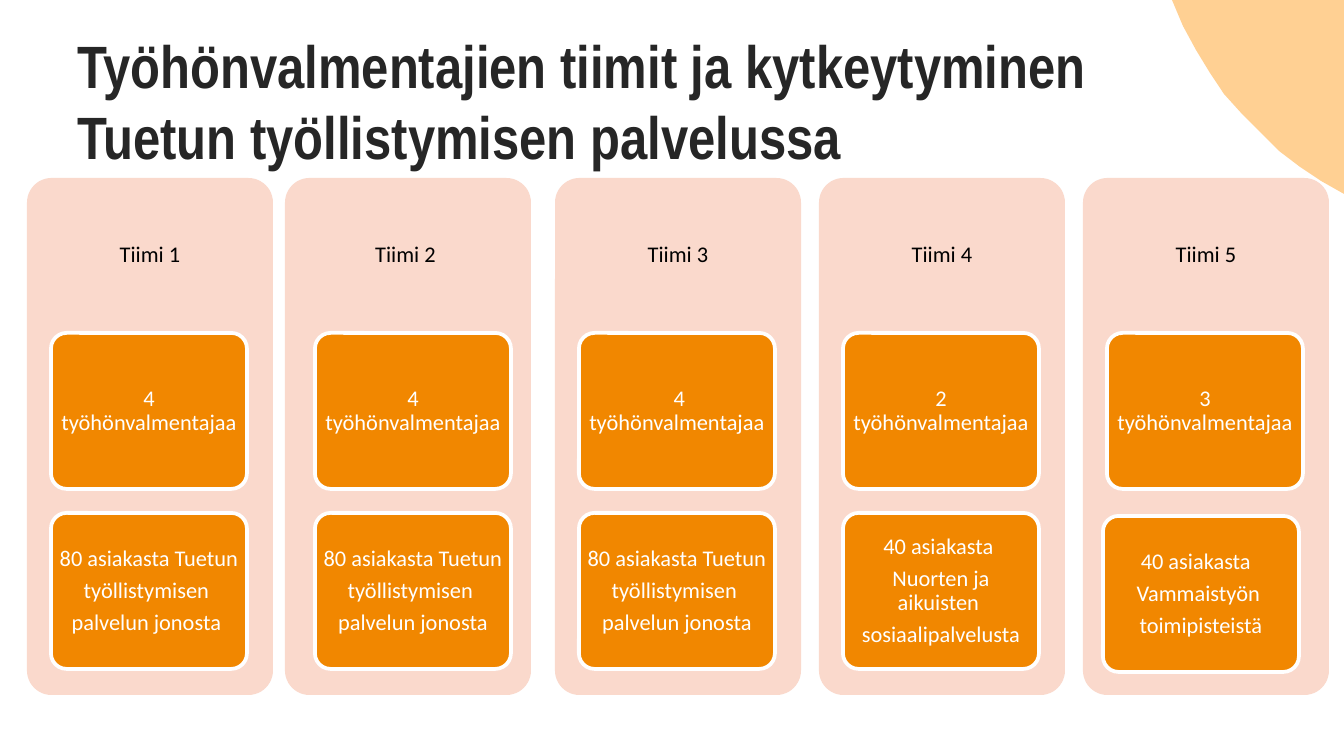
"""Build a slide of five job coach teams and the clients each one serves."""
from pptx import Presentation
from pptx.dml.color import RGBColor
from pptx.enum.shapes import MSO_SHAPE
from pptx.enum.text import MSO_ANCHOR, MSO_AUTO_SIZE, PP_ALIGN
from pptx.util import Pt

ROUND = MSO_SHAPE.ROUNDED_RECTANGLE
LEFT, CENTER = PP_ALIGN.LEFT, PP_ALIGN.CENTER
MIDDLE, BOTTOM = MSO_ANCHOR.MIDDLE, MSO_ANCHOR.BOTTOM
FIXED = MSO_AUTO_SIZE.NONE

PEACH = RGBColor(0xFF, 0xD0, 0x93)
PINK = RGBColor(0xFA, 0xD9, 0xCC)
ORANGE = RGBColor(0xF1, 0x87, 0x00)
WHITE = RGBColor(0xFF, 0xFF, 0xFF)
BLACK = RGBColor(0x00, 0x00, 0x00)
DARK = RGBColor(0x26, 0x26, 0x26)

PX = 914400 / 134.4
WIDTH, HEIGHT = 1344, 756

TITLE = "Työhönvalmentajien tiimit ja kytkeytyminen Tuetun työllistymisen palvelussa"
QUEUE = ["80 asiakasta Tuetun ", "työllistymisen ", "palvelun jonosta"]
SOCIAL = ["40 asiakasta ", "Nuorten ja aikuisten ", "sosiaalipalvelusta"]
SITES = ["40 asiakasta  ", "Vammaistyön ", "toimipisteistä"]
TEAMS = [
    {"name": "Tiimi 1", "staff": "4 työhönvalmentajaa",
     "clients": QUEUE[:2] + ["palvelun jonosta "]},
    {"name": "Tiimi 2 ", "staff": "4 työhönvalmentajaa", "clients": QUEUE, "shift": -6},
    {"name": "Tiimi 3", "staff": " 4 työhönvalmentajaa", "clients": QUEUE},
    {"name": "Tiimi 4", "staff": "2 työhönvalmentajaa", "clients": SOCIAL},
    {"name": "Tiimi 5", "staff": "3 työhönvalmentajaa", "clients": SITES, "nudge": (-4, 3)},
]
CURVE = [(1172, 0), (1183, 26), (1196, 50), (1210, 73), (1224, 94), (1242, 114),
         (1261, 133), (1279, 151), (1300, 167), (1321, 181), (1344, 194), (1344, 0)]

EDGE, TOP, PITCH = 27, 178, 264
PANEL_W, PANEL_H = 246, 517
CARD_W, CARD_H = 196, 156
INDENT, STAFF_Y, CLIENT_Y = 24, 333, 513


def px(*nums):
    return [round(n * PX) for n in nums]


def write(shape, lines, size=12, font="Calibri", color=WHITE, bold=False,
          align=CENTER, anchor=MIDDLE, inset=(4, 4), leading=0.9, after=4.2):
    frame = shape.text_frame
    frame.word_wrap = True
    frame.auto_size = FIXED
    frame.vertical_anchor = anchor
    side, cap = px(*inset)
    frame.margin_left = frame.margin_right = side
    frame.margin_top = frame.margin_bottom = cap
    for i, line in enumerate(lines):
        para = frame.paragraphs[0] if i == 0 else frame.add_paragraph()
        para.alignment = align
        para.line_spacing = leading
        para.space_before = Pt(0)
        para.space_after = Pt(after)
        run = para.add_run()
        run.text = line
        run.font.size = Pt(size)
        run.font.name = font
        run.font.bold = bold
        run.font.color.rgb = color


def paint(shape, fill, line=None):
    shape.shadow.inherit = False
    shape.fill.solid()
    shape.fill.fore_color.rgb = fill
    if line is None:
        shape.line.fill.background()
    else:
        shape.line.color.rgb = line
        shape.line.width = Pt(2)


def block(shapes, x, y, w, h, fill, line=None):
    shape = shapes.add_shape(ROUND, *px(x, y, w, h))
    shape.adjustments[0] = 0.1
    paint(shape, fill, line)
    return shape


def draw_team(shapes, index, team):
    x = EDGE + index * PITCH
    left = x + team.get("shift", 0)
    block(shapes, left, TOP, PANEL_W, PANEL_H, PINK)
    label = shapes.add_textbox(*px(left, TOP, PANEL_W, STAFF_Y - TOP))
    write(label, [team["name"]], color=BLACK, inset=(7, 7))
    dx, dy = team.get("nudge", (0, 0))
    cards = [(0, STAFF_Y, [team["staff"]]), (dx, CLIENT_Y + dy, team["clients"])]
    for move, y, lines in cards:
        card = block(shapes, x + INDENT + move, y, CARD_W, CARD_H, ORANGE, WHITE)
        write(card, lines)


def main():
    deck = Presentation()
    deck.slide_width, deck.slide_height = px(WIDTH, HEIGHT)
    slide = deck.slides.add_slide(deck.slide_layouts[5])
    shapes = slide.shapes

    pen = shapes.build_freeform(*CURVE[0], scale=PX)
    pen.add_line_segments(CURVE[1:], close=True)
    paint(pen.convert_to_shape(), PEACH)

    for index, team in enumerate(TEAMS):
        draw_team(shapes, index, team)

    title = shapes.title
    title.left, title.top, title.width, title.height = px(64, 35, 1137, 144)
    write(title, [TITLE], size=32, font="Arial Narrow", color=DARK, bold=True,
          align=LEFT, anchor=BOTTOM, inset=(13, 7), leading=1.0, after=0)
    deck.save("out.pptx")


if __name__ == "__main__":
    main()
